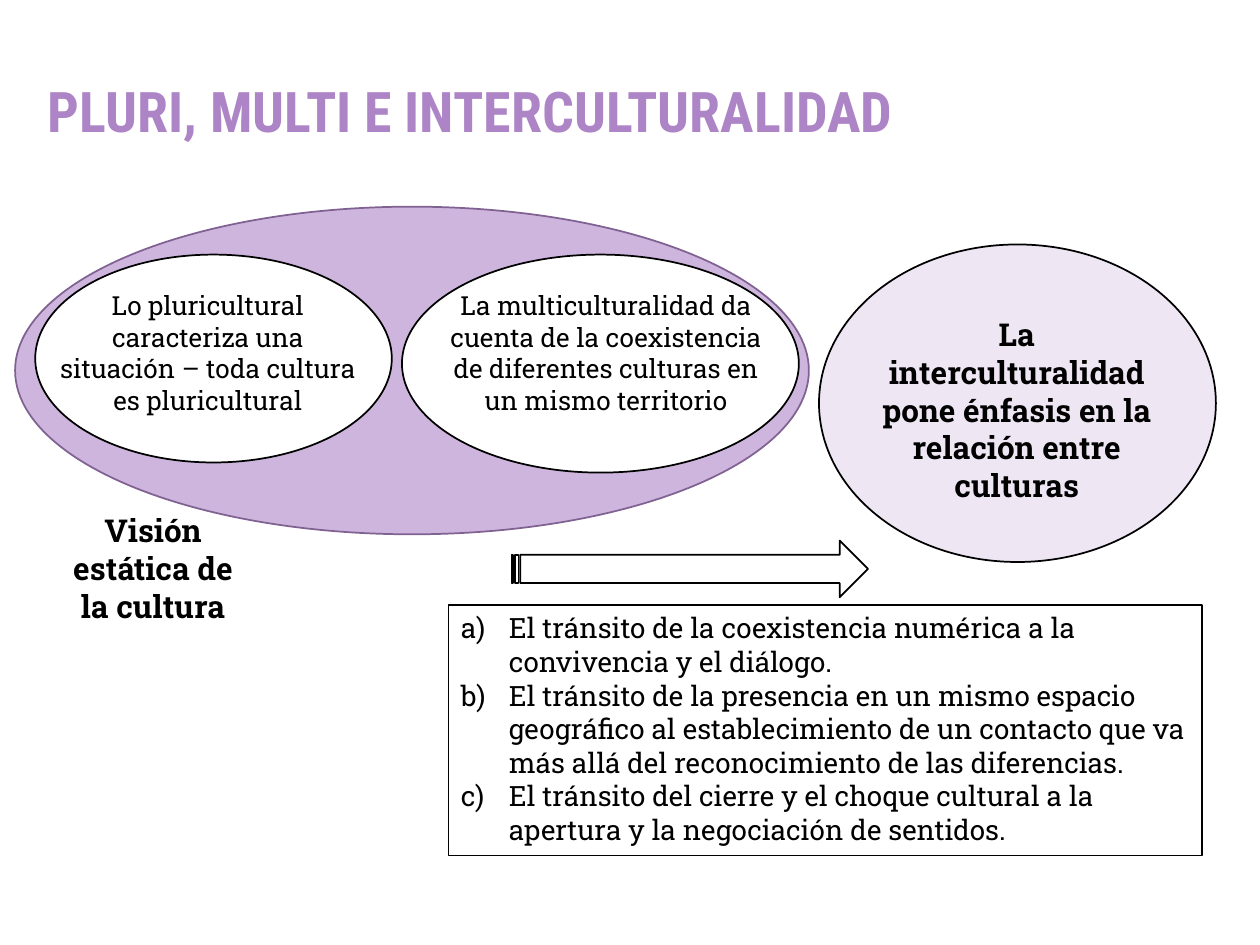
from collections import namedtuple

from lxml import etree
from pptx import Presentation
from pptx import util as u
from pptx.dml.color import RGBColor
from pptx.enum import shapes, text
from pptx.oxml import ns

Box = namedtuple("Box", "left top width height")

BLACK = RGBColor(0x00, 0x00, 0x00)
WHITE = RGBColor(0xFF, 0xFF, 0xFF)
PURPLE = RGBColor(0xAD, 0x84, 0xC6)
LILAC = RGBColor(0xCE, 0xB5, 0xDD)
PALE_LILAC = RGBColor(0xEF, 0xE6, 0xF4)
DARK_PURPLE = RGBColor(0x80, 0x62, 0x92)
HEADING_FONT = "Roboto Condensed"
BODY_FONT = "Roboto Slab"

TRANSITIONS = [
    "El tránsito de la coexistencia numérica a la convivencia y el diálogo.",
    "El tránsito de la presencia en un mismo espacio geográfico al establecimiento "
    "de un contacto que va más allá del reconocimiento de las diferencias.",
    "El tránsito del cierre y el choque cultural a la apertura y la negociación de sentidos.",
]


def within(box, left, top, width, height):
    return Box(
        round(box.left + box.width * left / 100),
        round(box.top + box.height * top / 100),
        round(box.width * width / 100),
        round(box.height * height / 100),
    )


def add_outline(page, kind, box, fill=WHITE, line=BLACK):
    shape = page.shapes.add_shape(kind, *box)
    shape.shadow.inherit = False
    shape.fill.solid()
    shape.fill.fore_color.rgb = fill
    shape.line.color.rgb = line
    shape.line.width = u.Pt(1)
    return shape


def add_span(para, words, size, bold=False, font=BODY_FONT, color=BLACK):
    span = para.add_run()
    span.text = words
    span.font.name = font
    span.font.size = u.Pt(size)
    span.font.bold = bold
    span.font.color.rgb = color


def add_text(page, box, words, size, bold=False):
    frame = page.shapes.add_textbox(*box).text_frame
    frame.word_wrap = True
    para = frame.paragraphs[0]
    para.alignment = text.PP_ALIGN.CENTER
    add_span(para, words, size, bold)


def add_title(page, box):
    frame = page.shapes.add_textbox(*box).text_frame
    frame.word_wrap = True
    frame.vertical_anchor = text.MSO_ANCHOR.MIDDLE
    para = frame.paragraphs[0]
    para.line_spacing = 0.9
    add_span(para, "PLURI, MULTI E INTERCULTURALIDAD", 32, True, HEADING_FONT, PURPLE)


def add_static_view(page, box):
    oval = shapes.MSO_SHAPE.OVAL
    add_outline(page, oval, box, LILAC, DARK_PURPLE)
    add_outline(page, oval, within(box, 48.73, 14.62, 50, 66.54))
    add_outline(page, oval, within(box, 2.54, 14.62, 44.92, 63.46))
    add_text(page, within(box, 3.65, 23.46, 41.27, 42.69),
             "Lo pluricultural caracteriza una situación – toda cultura es pluricultural", 15)
    add_text(page, within(box, 52.54, 23.46, 43.81, 42.69),
             "La multiculturalidad da cuenta de la coexistencia de diferentes culturas "
             "en un mismo territorio", 15)


def add_intercultural_view(page, box):
    add_outline(page, shapes.MSO_SHAPE.OVAL, box, PALE_LILAC)
    add_text(page, within(box, 12.38, 20.24, 74.92, 64.29),
             "La interculturalidad pone énfasis en la relación entre culturas", 18, True)


def add_transitions(page, box):
    frame = add_outline(page, shapes.MSO_SHAPE.RECTANGLE, box).text_frame
    frame.word_wrap = True
    frame.vertical_anchor = text.MSO_ANCHOR.TOP
    indent = u.Inches(0.38)
    for index, words in enumerate(TRANSITIONS):
        para = frame.add_paragraph() if index else frame.paragraphs[0]
        para.alignment = text.PP_ALIGN.LEFT
        properties = para._p.get_or_add_pPr()
        properties.set("marL", str(indent))
        properties.set("indent", str(-indent))
        bullet_font = etree.SubElement(properties, ns.qn("a:buFont"))
        bullet_font.set("typeface", BODY_FONT)
        bullet = etree.SubElement(properties, ns.qn("a:buAutoNum"))
        bullet.set("type", "alphaLcParenR")
        add_span(para, words, 16)


def main():
    deck = Presentation()
    deck.slide_width, deck.slide_height = u.Inches(10), u.Inches(7.5)
    page = deck.slides.add_slide(deck.slide_layouts[6])
    whole = Box(0, 0, deck.slide_width, deck.slide_height)

    add_static_view(page, within(whole, 1.2, 21.87, 63, 34.67))
    add_intercultural_view(page, within(whole, 65, 25.87, 31.5, 33.6))
    add_title(page, within(whole, 2.8, 0.4, 93, 23.33))
    add_transitions(page, within(whole, 35.6, 64, 59.8, 26.53))
    add_outline(page, shapes.MSO_SHAPE.STRIPED_RIGHT_ARROW,
                within(whole, 40.6, 57.2, 28.3, 6))
    add_text(page, within(whole, 3.5, 53.47, 17.3, 13.47),
             "Visión estática de la cultura", 18, True)
    deck.save("out.pptx")


if __name__ == "__main__":
    main()
